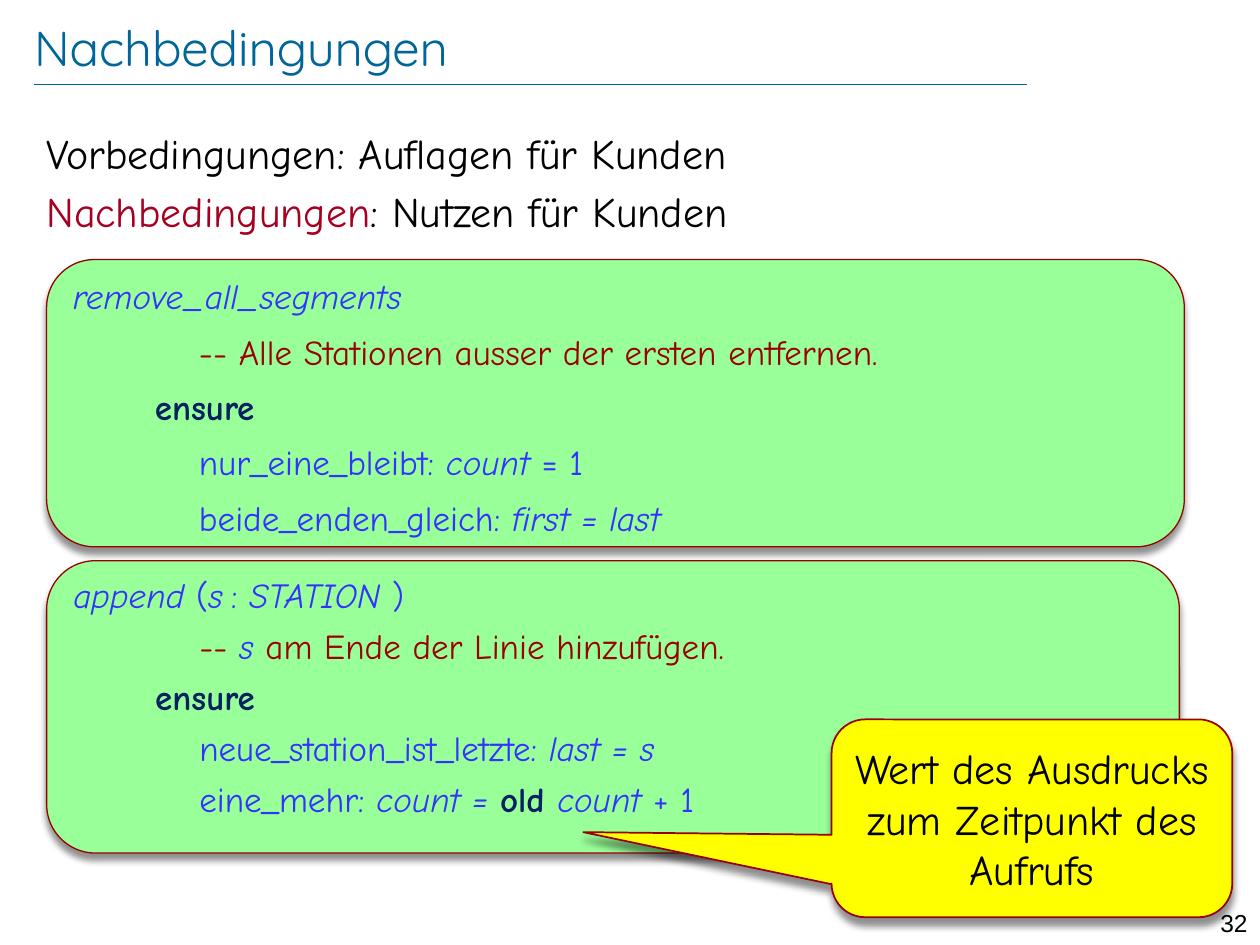
from typing import NamedTuple

from lxml.etree import SubElement
from pptx import Presentation
from pptx.dml.color import RGBColor
from pptx.enum.shapes import MSO_CONNECTOR, MSO_SHAPE
from pptx.enum.text import MSO_ANCHOR, PP_ALIGN
from pptx.oxml.ns import qn
from pptx.util import Inches, Pt

TEAL, BLACK, CRIMSON = "006699", "000000", "A50021"
BLUE, DARK_RED, NAVY = "3333FF", "990000", "002060"
GREEN, YELLOW = "99FF99", "FFFF00"
BODY_FONT = "Comic Neue"
KEYWORD_INDENT, CLAUSE_INDENT = 0.65, 1.0


class Run(NamedTuple):
    text: str
    color: str = BLUE
    italic: bool = False
    bold: bool = False
    size: float | None = None


class Line(NamedTuple):
    runs: list[Run]
    indent: float = 0


class Box(NamedTuple):
    left: float
    top: float
    width: float
    height: float


class CodePanel(NamedTuple):
    box: Box
    spacing: float
    lines: list[Line]


def name(text: str) -> Run:
    return Run(text, italic=True)


def keyword(text: str) -> Run:
    return Run(text, NAVY, bold=True)


def comment(text: str) -> Run:
    return Run(text, DARK_RED)


ENSURE = Line([keyword("ensure")], KEYWORD_INDENT)

PANELS = [
    CodePanel(Box(0.37, 2.06, 9.03, 2.28), 0.9, [
        Line([name("remove_all_segments")]),
        Line([comment("-- Alle Stationen ausser der ersten entfernen.")], CLAUSE_INDENT),
        ENSURE,
        Line([Run("nur_eine_bleibt: "), name("count "), Run("= 1")], CLAUSE_INDENT),
        Line([Run("beide_enden_gleich: "), name("first = last")], CLAUSE_INDENT),
    ]),
    CodePanel(Box(0.37, 4.45, 8.99, 2.32), 0.8, [
        Line([name("append "), Run("("), name("s"), Run(" ", size=14), Run(":"),
              name(" STATION "), Run(")")]),
        Line([comment("-- "), name("s"), comment(" am Ende der Linie hinzufügen.")],
             CLAUSE_INDENT),
        ENSURE,
        Line([Run("neue_station_ist_letzte:"), name(" last = s")], CLAUSE_INDENT),
        Line([Run("eine_mehr: "), name("count = "), keyword("old "), name("count "),
              Run("+ 1")], CLAUSE_INDENT),
    ]),
]


def rgb(color: str) -> RGBColor:
    return RGBColor.from_string(color)


def place(box: Box) -> list[Inches]:
    return [Inches(value) for value in box]


def write(sp, lines: list[Line], size: float, font=BODY_FONT, align=PP_ALIGN.LEFT,
          anchor=MSO_ANCHOR.TOP, gap: float = 0, spacing: float = 1.0) -> None:
    tf = sp.text_frame
    tf.word_wrap = True
    tf.vertical_anchor = anchor
    for i, line in enumerate(lines):
        p = tf.add_paragraph() if i else tf.paragraphs[0]
        p.alignment = align
        p.line_spacing = spacing
        p.space_before = Pt(gap if i else 0)
        p.font.name = font
        p.font.size = Pt(size)
        if line.indent:
            pPr = p._p.get_or_add_pPr()
            pPr.set("marL", str(Inches(line.indent)))
            pPr.set("indent", "0")
        for run in line.runs:
            r = p.add_run()
            r.text = run.text
            r.font.color.rgb = rgb(run.color)
            r.font.italic = run.italic
            r.font.bold = run.bold
            if run.size:
                r.font.size = Pt(run.size)


def add_text(s, box: Box, lines: list[Line], size: float, **style):
    sp = s.shapes.add_textbox(*place(box))
    write(sp, lines, size, **style)
    return sp


def add_shadow(sp) -> None:
    """Drop a soft black shadow straight down."""
    sp.shadow.inherit = False
    effects = sp._element.spPr.find(qn("a:effectLst"))
    shadow = SubElement(effects, qn("a:outerShdw"), blurRad=str(Pt(4)), dist=str(Pt(4)),
                        dir="5400000", rotWithShape="0")
    color = SubElement(shadow, qn("a:srgbClr"), val=BLACK)
    SubElement(color, qn("a:alpha"), val="43000")


def add_panel(s, kind: MSO_SHAPE, box: Box, fill: str, line_width: float):
    sp = s.shapes.add_shape(kind, *place(box))
    sp.fill.solid()
    sp.fill.fore_color.rgb = rgb(fill)
    sp.line.color.rgb = rgb(DARK_RED)
    sp.line.width = Pt(line_width)
    add_shadow(sp)
    return sp


def add_rule(s, left: float, right: float, y: float) -> None:
    rule = s.shapes.add_connector(MSO_CONNECTOR.STRAIGHT, Inches(left), Inches(y),
                                  Inches(right), Inches(y))
    rule.line.color.rgb = rgb(TEAL)
    rule.line.width = Pt(0.25)
    SubElement(rule._element.spPr, qn("a:effectLst"))


def add_callout(s) -> None:
    sp = add_panel(s, MSO_SHAPE.ROUNDED_RECTANGULAR_CALLOUT, Box(6.6, 5.71, 3.18, 1.57),
                   YELLOW, 1)
    for i, value in enumerate((-1.12, 0.07, 0.17)):
        sp.adjustments[i] = value
    sp.text_frame.margin_left = sp.text_frame.margin_right = 0
    write(sp, [Line([Run("Wert des Ausdrucks zum Zeitpunkt des Aufrufs", BLACK)])], 24,
          align=PP_ALIGN.CENTER, anchor=MSO_ANCHOR.MIDDLE)


def main() -> None:
    prs = Presentation()
    prs.slide_width, prs.slide_height = Inches(10), Inches(7.5)
    s = prs.slides.add_slide(prs.slide_layouts[6])

    add_rule(s, 0.27, 8.15, 0.67)
    add_text(s, Box(9.45, 7.16, 0.55, 0.24), [Line([Run("32", BLACK)])], 14,
             font="Arial", align=PP_ALIGN.RIGHT)
    title = add_text(s, Box(0.27, 0.13, 8.69, 0.48), [Line([Run("Nachbedingungen", TEAL)])],
                     28, font="Quicksand", anchor=MSO_ANCHOR.MIDDLE)
    tf = title.text_frame
    tf.margin_left = tf.margin_right = tf.margin_top = tf.margin_bottom = 0
    add_text(s, Box(0.27, 0.96, 9.4, 1.04), [
        Line([Run("Vorbedingungen: Auflagen für Kunden", BLACK)]),
        Line([Run("Nachbedingungen", CRIMSON), Run(": Nutzen für Kunden", BLACK)]),
    ], 24, gap=4.8)

    for panel in PANELS:
        sp = add_panel(s, MSO_SHAPE.ROUNDED_RECTANGLE, panel.box, GREEN, 0.75)
        write(sp, panel.lines, 20, gap=10, spacing=panel.spacing)
    add_callout(s)

    prs.save("out.pptx")


if __name__ == "__main__":
    main()
